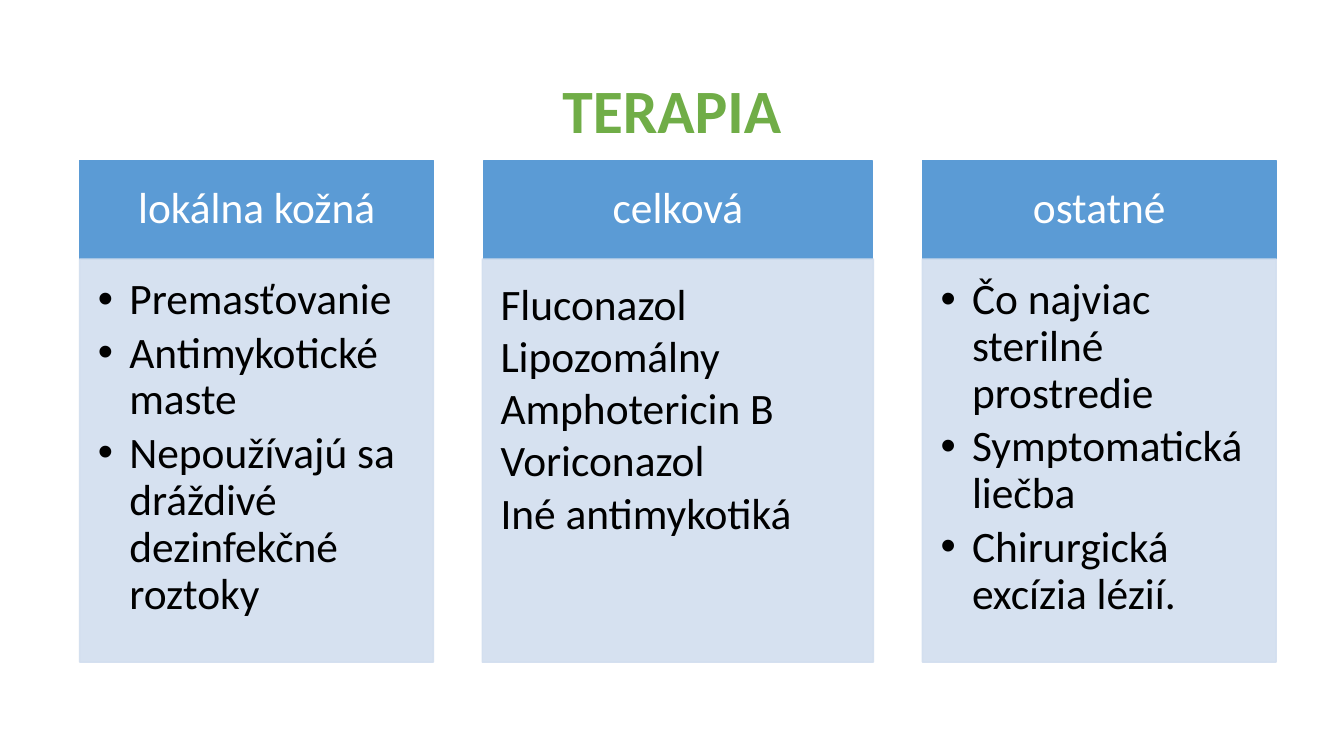
from lxml.etree import SubElement
from pptx import Presentation
from pptx.dml.color import RGBColor
from pptx.enum.shapes import MSO_SHAPE
from pptx.enum.text import MSO_ANCHOR, PP_ALIGN
from pptx.oxml.ns import qn
from pptx.util import Pt

COLORS = {
    "title": "70AD47",
    "header": "5B9BD5",
    "body": "D2DEEF",
    "header text": "FFFFFF",
    "body text": "000000",
}
TEXT_SIZE = 31
HEADER_TOP, HEADER_HEIGHT = 114.5, 70.5
BODY_TOP, BODY_HEIGHT = HEADER_TOP + HEADER_HEIGHT, 288

# Heading, left and width of header, left and width of body, bulleted, items
columns = [
    ("lokálna kožná", 56.9, 252.7, 56.9, 252.7, True,
     ["Premasťovanie", "Antimykotické maste",
      "Nepoužívajú sa dráždivé dezinfekčné roztoky"]),
    ("celková", 345.6, 277.2, 344.5, 279.4, False,
     ["Fluconazol", "Lipozomálny Amphotericin B", "Voriconazol",
      "Iné antimykotiká"]),
    ("ostatné", 658.8, 252.7, 658.8, 252.7, True,
     ["Čo najviac sterilné prostredie", "Symptomatická liečba",
      "Chirurgická excízia lézií."]),
]


def add_box(left, top, width, height, color, margins, anchor, alpha=None):
    box = page.shapes.add_shape(
        MSO_SHAPE.RECTANGLE, Pt(left), Pt(top), Pt(width), Pt(height))
    box.shadow.inherit = False
    box.fill.solid()
    box.line.width = Pt(1)
    for paint in (box.fill.fore_color, box.line.color):
        paint.rgb = RGBColor.from_string(COLORS[color])
    if alpha:
        for color_node in box._element.spPr.iter(qn("a:srgbClr")):
            SubElement(color_node, qn("a:alpha"), val=str(alpha * 1000))
    frame = box.text_frame
    frame.word_wrap = True
    frame.vertical_anchor = anchor
    (frame.margin_left, frame.margin_top,
     frame.margin_right, frame.margin_bottom) = map(Pt, margins)
    return frame


def add_text(para, text, size, color, align, bold=False):
    para.alignment = align
    span = para.add_run()
    span.text = text
    span.font.name = "Calibri"
    span.font.size = Pt(size)
    span.font.bold = bold
    span.font.color.rgb = RGBColor.from_string(COLORS[color])


deck = Presentation()
deck.slide_width, deck.slide_height = Pt(960), Pt(540)
page = deck.slides.add_slide(deck.slide_layouts[6])

# Title
title_box = page.shapes.add_textbox(Pt(66), Pt(28.75), Pt(828), Pt(104.4))
title_frame = title_box.text_frame
title_frame.word_wrap = True
title_frame.vertical_anchor = MSO_ANCHOR.MIDDLE
title_para = title_frame.paragraphs[0]
title_para.line_spacing = 0.9
add_text(title_para, "TERAPIA", 44, "title", PP_ALIGN.CENTER, bold=True)

for (heading, header_left, header_width,
     body_left, body_width, bulleted, items) in columns:
    # Column header
    header = add_box(header_left, HEADER_TOP, header_width, HEADER_HEIGHT,
                     "header", (17.3, 10, 17.3, 10), MSO_ANCHOR.MIDDLE)
    heading_para = header.paragraphs[0]
    heading_para.line_spacing = 0.9
    add_text(heading_para, heading, TEXT_SIZE, "header text", PP_ALIGN.CENTER)

    # Column body
    body = add_box(body_left, BODY_TOP, body_width, BODY_HEIGHT,
                   "body", (13, 13, 17.3, 19.5), MSO_ANCHOR.TOP, alpha=90)
    for index, item in enumerate(items):
        para = body.add_paragraph() if index else body.paragraphs[0]
        add_text(para, item, TEXT_SIZE, "body text", PP_ALIGN.LEFT)
        if bulleted:
            para.line_spacing = 0.9
            para.space_after = Pt(0.15 * TEXT_SIZE)
            properties = para._p.get_or_add_pPr()
            properties.set("marL", str(Pt(22.5)))
            properties.set("indent", str(-Pt(22.5)))
            SubElement(properties, qn("a:buFont"), typeface="Arial")
            SubElement(properties, qn("a:buChar"), char="•")

deck.save("out.pptx")
